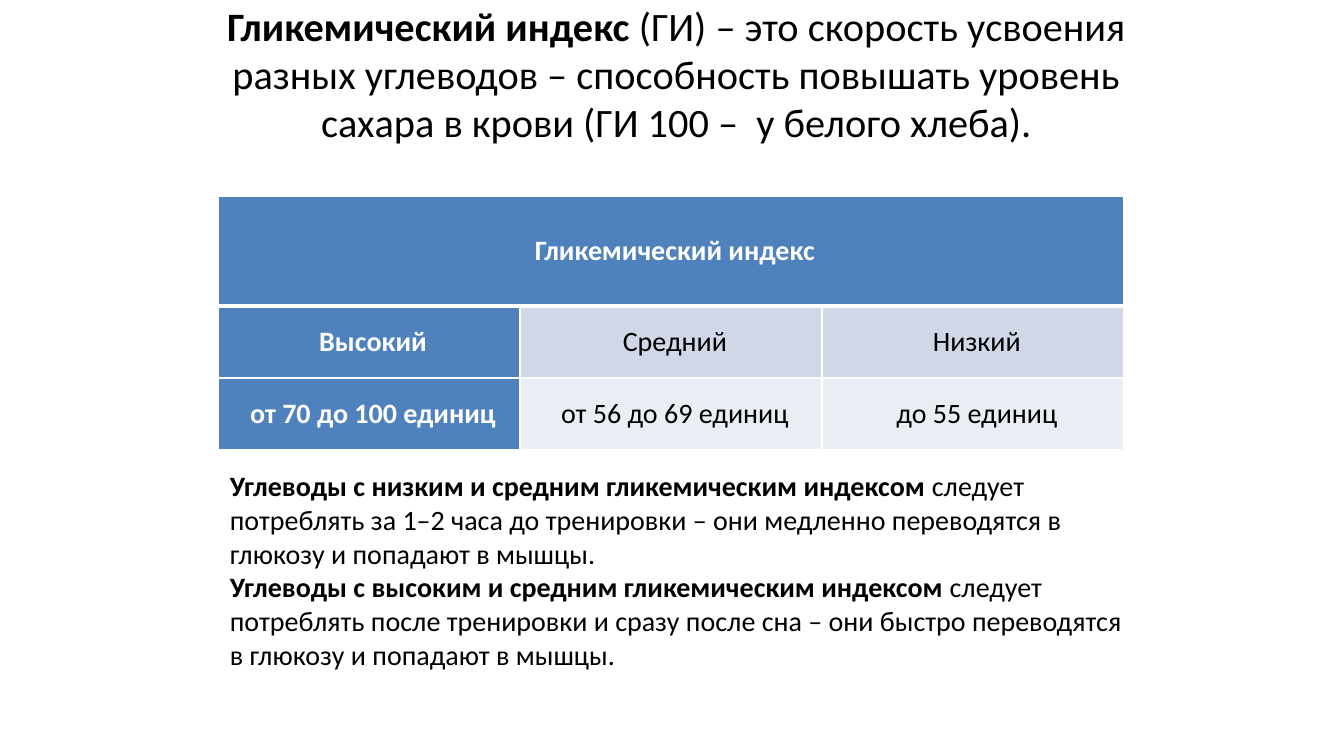
from lxml import etree
from pptx import Presentation
from pptx import util as u
from pptx.dml.color import RGBColor
from pptx.enum import text
from pptx.oxml.ns import qn

SCALE = 914400 / 100.8  # EMU in one px
WHITE = RGBColor(0xFF, 0xFF, 0xFF)
BLACK = RGBColor(0x00, 0x00, 0x00)
BLUE = RGBColor(0x4F, 0x81, 0xBD)
BANDS = [RGBColor(0xD0, 0xD8, 0xE8), RGBColor(0xE9, 0xED, 0xF4)]

# A paragraph is a list of (words, bold) runs.
DEFINITION = [
    ("Гликемический индекс ", True),
    ("(ГИ) – это скорость усвоения разных углеводов – способность повышать "
     "уровень сахара в крови (ГИ 100 –  у белого хлеба).", False),
]
INDEX_HEADING = "Гликемический индекс"
INDEX_LEVELS = [
    ("Высокий", "Средний", "Низкий"),
    ("от 70 до 100 единиц", "от 56 до 69 единиц", "до 55 единиц"),
]
ADVICE = [
    [("Углеводы с низким и средним гликемическим индексом ", True),
     ("следует потреблять за 1–2 часа до тренировки – они медленно "
      "переводятся в глюкозу и попадают в мышцы.", False)],
    [("Углеводы с высоким и средним гликемическим индексом ", True),
     ("следует потреблять после тренировки и сразу после сна – они быстро "
      "переводятся в глюкозу и попадают в мышцы.", False)],
]

DEFINITION_BOX = (196, 30, 961, 126)
TABLE_LEFT, TABLE_TOP = 218, 196
COLUMN_WIDTH = 302
ROW_HEIGHTS = [110, 72, 72]
ADVICE_BOX = (220, 464, 928, 213)


def px(length):
    return u.Emu(round(length * SCALE))


def write(frame, paragraphs, size=20, color=BLACK, align=text.PP_ALIGN.LEFT, indent=0):
    for number, runs in enumerate(paragraphs):
        paragraph = frame.add_paragraph() if number else frame.paragraphs[0]
        paragraph.alignment = align
        if indent:
            paragraph._p.get_or_add_pPr().set("marL", str(px(indent)))
        for words, bold in runs:
            run = paragraph.add_run()
            run.text = words
            run.font.name = "Calibri"
            run.font.size = u.Pt(size)
            run.font.bold = bold
            run.font.color.rgb = color


def add_borders(cell, **widths):
    """Draw white cell edges; widths are points for L, R, T and B."""
    for side, width in widths.items():
        line = etree.SubElement(cell._tc.get_or_add_tcPr(), qn(f"a:ln{side}"), w=str(u.Pt(width)))
        fill = etree.SubElement(line, qn("a:solidFill"))
        etree.SubElement(fill, qn("a:srgbClr"), val=str(WHITE))


def add_definition(slide):
    title = slide.shapes.title
    title.left, title.top, title.width, title.height = map(px, DEFINITION_BOX)
    frame = title.text_frame
    frame.word_wrap = True
    frame.auto_size = text.MSO_AUTO_SIZE.NONE
    frame.vertical_anchor = text.MSO_ANCHOR.BOTTOM
    frame.margin_bottom = px(10)
    write(frame, [DEFINITION], size=28.8, align=text.PP_ALIGN.CENTER)


def add_index_table(slide):
    columns = len(INDEX_LEVELS[0])
    table = slide.shapes.add_table(
        len(ROW_HEIGHTS), columns, px(TABLE_LEFT), px(TABLE_TOP),
        px(COLUMN_WIDTH * columns), px(sum(ROW_HEIGHTS))).table
    for column in table.columns:
        column.width = px(COLUMN_WIDTH)
    for row, height in zip(table.rows, ROW_HEIGHTS):
        row.height = px(height)
    table.cell(0, 0).merge(table.cell(0, columns - 1))

    rows = [(INDEX_HEADING, "", "")] + INDEX_LEVELS
    for r, row in enumerate(rows):
        for c, words in enumerate(row):
            cell = table.cell(r, c)
            strong = r == 0 or c == 0
            add_borders(cell, L=1, R=1, T=3 if r == 1 else 1, B=3 if r == 0 else 1)
            cell.fill.solid()
            cell.fill.fore_color.rgb = BLUE if strong else BANDS[r - 1]
            cell.vertical_anchor = text.MSO_ANCHOR.MIDDLE
            cell.margin_left = cell.margin_right = px(10)
            cell.margin_top = cell.margin_bottom = 0
            if words:
                write(cell.text_frame, [[(words, strong)]], color=WHITE if strong else BLACK,
                      align=text.PP_ALIGN.CENTER, indent=8)


def add_advice(slide):
    frame = slide.shapes.add_textbox(*map(px, ADVICE_BOX)).text_frame
    frame.word_wrap = True
    write(frame, ADVICE)


def main():
    deck = Presentation()
    deck.slide_width, deck.slide_height = px(1344), px(756)
    slide = deck.slides.add_slide(deck.slide_layouts[5])
    add_definition(slide)
    add_index_table(slide)
    add_advice(slide)
    deck.save("out.pptx")


if __name__ == "__main__":
    main()
